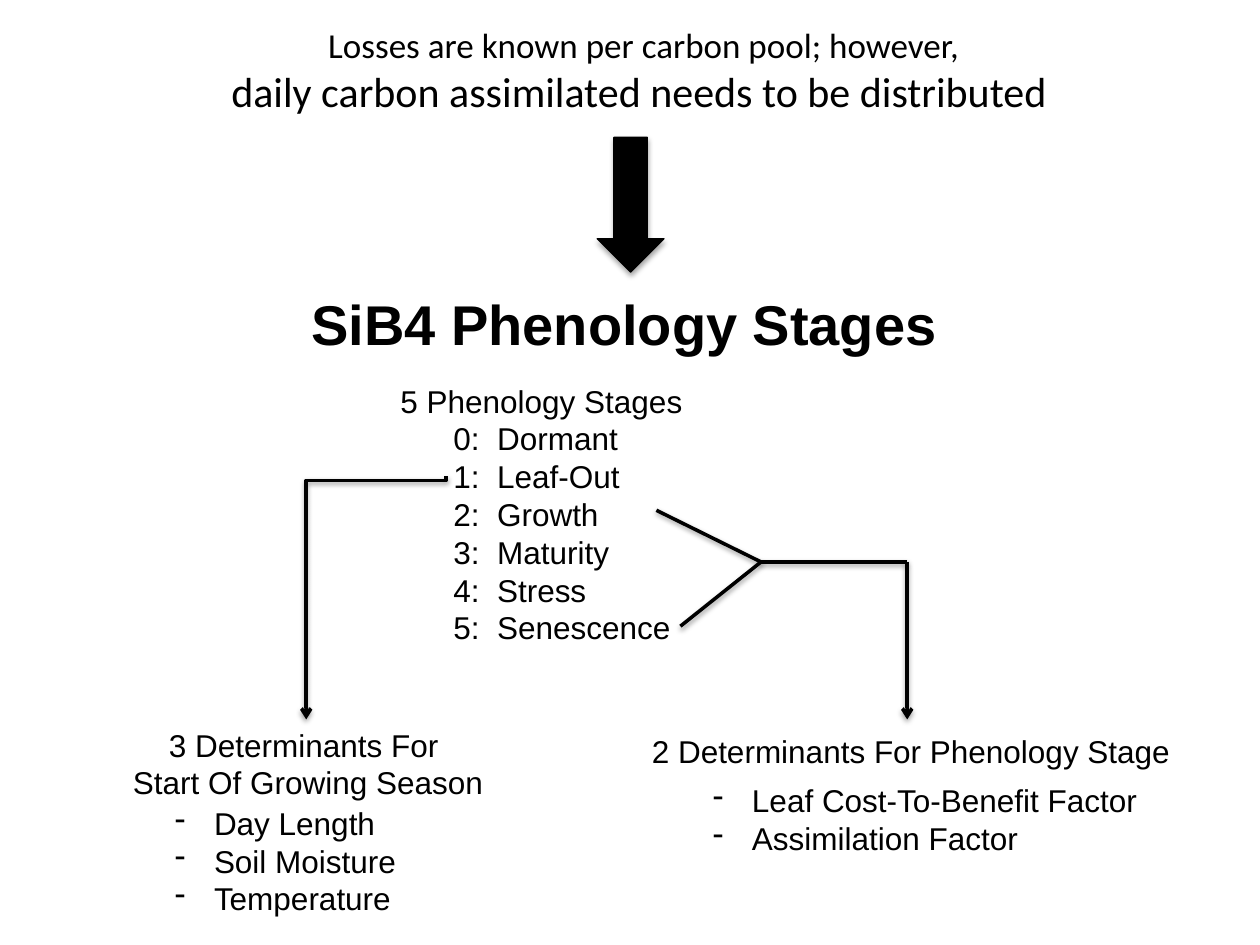
from dataclasses import dataclass

from lxml import etree
from pptx import Presentation
from pptx.dml.color import RGBColor
from pptx.enum import shapes, text
from pptx.oxml.ns import qn
from pptx.util import Inches, Pt

BLACK = RGBColor(0, 0, 0)
WIDTH, HEIGHT = 10, 7.5
STEP_INDENT, BULLET_INDENT = 0.42, 0.31
JOIN, TURN = (6.04, 4.46), (7.2, 4.46)


@dataclass
class Line:
    words: str
    size: float = 18
    font: str = "Arial"
    bold: bool = False
    indent: float = 0
    bullet: bool = False


@dataclass
class Block:
    box: tuple[float, float, float, float]
    lines: list[Line]
    align: text.PP_ALIGN = text.PP_ALIGN.LEFT


@dataclass
class Link:
    start: tuple[float, float]
    end: tuple[float, float]
    arrow: bool = False


def bullets(*items: str) -> list[Line]:
    return [Line(item, indent=BULLET_INDENT, bullet=True) for item in items]


CENTER = text.PP_ALIGN.CENTER
STAGES = ("Dormant", "Leaf-Out", "Growth", "Maturity", "Stress", "Senescence")
TITLE = Block((2.37, 2.25, 5.21, 0.64),
              [Line("SiB4 Phenology Stages", 32, bold=True)])
BLOCKS = [
    Block((3.08, 2.98, 2.46, 2.22),
          [Line("5 Phenology Stages")]
          + [Line(f"{i}:  {stage}", indent=STEP_INDENT)
             for i, stage in enumerate(STAGES)]),
    Block((0.94, 5.71, 3.01, 0.71),
          [Line("3 Determinants For "), Line("Start Of Growing Season")], CENTER),
    Block((1.29, 6.33, 1.98, 1.01),
          bullets("Day Length", "Soil Moisture", "Temperature")),
    Block((4.98, 5.76, 4.5, 0.4),
          [Line("2 Determinants For Phenology Stage")], CENTER),
    Block((5.56, 6.15, 3.61, 0.71),
          bullets("Leaf Cost-To-Benefit Factor", "Assimilation Factor")),
    Block((1.73, 0.14, 6.76, 0.84),
          [Line("Losses are known per carbon pool; however,", 20, "Calibri"),
           Line("daily carbon assimilated needs to be distributed ", 24, "Calibri")],
          CENTER),
]
LINKS = [
    Link((5.21, 4.05), JOIN),
    Link((5.4, 4.97), JOIN),
    Link(JOIN, TURN),
    Link(TURN, (7.2, 5.71), arrow=True),
]


def add_shadow(sp, alpha: int, dist: float) -> None:
    """Give the shape a soft black shadow straight below it."""
    spPr = sp._element.spPr
    for old in spPr.findall(qn("a:effectLst")):
        spPr.remove(old)
    effects = etree.SubElement(spPr, qn("a:effectLst"))
    outer = etree.SubElement(effects, qn("a:outerShdw"), blurRad=str(Pt(3.1)),
                             dist=str(Pt(dist)), dir="5400000", rotWithShape="0")
    color = etree.SubElement(outer, qn("a:srgbClr"), val=str(BLACK))
    etree.SubElement(color, qn("a:alpha"), val=str(alpha * 1000))


def fill_block(sp, block: Block) -> None:
    sp.left, sp.top, sp.width, sp.height = map(Inches, block.box)
    tf = sp.text_frame
    frame_format = {"word_wrap": False, "vertical_anchor": text.MSO_ANCHOR.TOP,
                    "auto_size": text.MSO_AUTO_SIZE.SHAPE_TO_FIT_TEXT}
    for name, value in frame_format.items():
        setattr(tf, name, value)
    for i, line in enumerate(block.lines):
        p = tf.add_paragraph() if i else tf.paragraphs[0]
        p.alignment = block.align
        r = p.add_run()
        r.text = line.words
        run_format = {"size": Pt(line.size), "name": line.font, "bold": line.bold}
        for name, value in run_format.items():
            setattr(r.font, name, value)
        r.font.color.rgb = BLACK
        if line.indent:
            pPr = p._p.get_or_add_pPr()
            pPr.set("marL", str(Inches(line.indent)))
            if line.bullet:
                pPr.set("indent", str(-Inches(line.indent)))
                etree.SubElement(pPr, qn("a:buChar"), char="-")


def add_link(slide, link: Link, kind=shapes.MSO_CONNECTOR.STRAIGHT):
    sp = slide.shapes.add_connector(kind, *map(Inches, link.start + link.end))
    sp.line.color.rgb = BLACK
    sp.line.width = Pt(2)
    if link.arrow:
        etree.SubElement(sp.line._get_or_add_ln(), qn("a:tailEnd"), type="arrow")
    add_shadow(sp, 38, 1.6)
    return sp


def add_season_link(slide) -> None:
    """Bent arrow from Leaf-Out, turned so that it leaves and arrives vertically."""
    left, top, width, height = 2.02, 4.19, 1.93, 1.11
    link = Link((left, top), (left + width, top + height), arrow=True)
    sp = add_link(slide, link, shapes.MSO_CONNECTOR.ELBOW)
    spPr = sp._element.spPr
    spPr.find(qn("a:xfrm")).set("rot", str(90 * 60000))
    guides = spPr.find(qn("a:prstGeom")).find(qn("a:avLst"))
    etree.SubElement(guides, qn("a:gd"), name="adj1", fmla="val 1800")


def add_down_arrow(slide) -> None:
    sp = slide.shapes.add_shape(shapes.MSO_SHAPE.DOWN_ARROW,
                                *map(Inches, (4.74, 1.09, 0.53, 1.07)))
    sp.fill.solid()
    sp.fill.fore_color.rgb = BLACK
    sp.line.color.rgb = BLACK
    sp.line.width = Pt(0.75)
    add_shadow(sp, 35, 1.8)


def main() -> None:
    prs = Presentation()
    prs.slide_width, prs.slide_height = Inches(WIDTH), Inches(HEIGHT)
    slide = prs.slides.add_slide(prs.slide_layouts[5])
    fill_block(slide.shapes.title, TITLE)
    for block in BLOCKS:
        fill_block(slide.shapes.add_textbox(0, 0, 0, 0), block)
    add_season_link(slide)
    for link in LINKS:
        add_link(slide, link)
    add_down_arrow(slide)
    prs.save("out.pptx")


if __name__ == "__main__":
    main()
